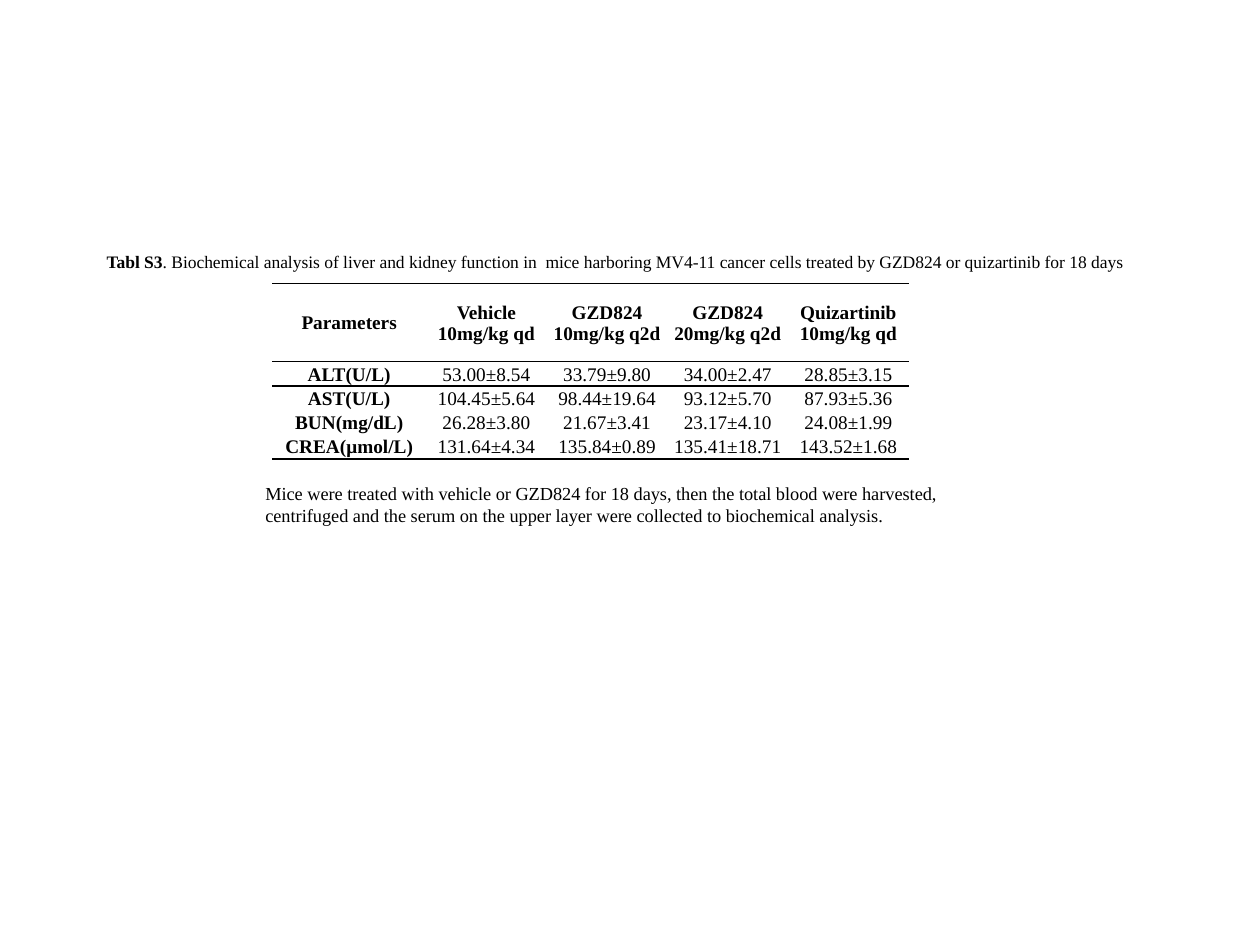
from dataclasses import dataclass

from lxml import etree
from pptx import Presentation
from pptx.dml.color import RGBColor
from pptx.enum import text
from pptx.oxml import ns
from pptx.util import Cm, Pt


@dataclass(frozen=True)
class Theme:
    font: str = "Times New Roman"
    ink: str = "000000"
    caption: float = 10
    table: float = 11
    note: float = 10.5
    rule: float = 1
    plain_table: str = "{2D5ABB26-0587-4C30-8999-92F81FD0307C}"


THEME = Theme()

CAPTION = [
    ("Tabl S3", True),
    (". Biochemical analysis of liver and kidney function in  mice harboring MV4-11 "
     "cancer cells treated by GZD824 or quizartinib for 18 days", False),
]
ROWS = [
    ["Parameters", "Vehicle 10mg/kg qd", "GZD824 10mg/kg q2d",
     "GZD824 20mg/kg q2d", "Quizartinib 10mg/kg qd"],
    ["ALT(U/L)", "53.00±8.54", "33.79±9.80", "34.00±2.47", "28.85±3.15"],
    ["AST(U/L)", "104.45±5.64", "98.44±19.64", "93.12±5.70", "87.93±5.36"],
    ["BUN(mg/dL)", "26.28±3.80", "21.67±3.41", "23.17±4.10", "24.08±1.99"],
    ["CREA(μmol/L)", "131.64±4.34", "135.84±0.89", "135.41±18.71", "143.52±1.68"],
]
NOTE = [
    ("Mice were treated with vehicle or GZD824 for 18 days, then the total blood were "
     "harvested, centrifuged and the serum on the upper layer were collected to "
     "biochemical analysis.", False),
]


def add_span(para, words, size, bold=False):
    span = para.add_run()
    span.text = words
    span.font.name = THEME.font
    span.font.size = Pt(size)
    span.font.bold = bold
    span.font.color.rgb = RGBColor.from_string(THEME.ink)


def add_text(page, left, top, width, height, spans, size, wrap=True):
    box = page.shapes.add_textbox(left, top, width, height)
    frame = box.text_frame
    frame.word_wrap = wrap
    frame.auto_size = text.MSO_AUTO_SIZE.SHAPE_TO_FIT_TEXT
    for words, bold in spans:
        add_span(frame.paragraphs[0], words, size, bold)


def add_rule(cell, side):
    """Draw one cell border; side is lnT or lnB, added in that order."""
    line = etree.SubElement(cell._tc.get_or_add_tcPr(), ns.qn(f"a:{side}"),
                            w=str(Pt(THEME.rule)))
    fill = etree.SubElement(line, ns.qn("a:solidFill"))
    etree.SubElement(fill, ns.qn("a:srgbClr"), val=THEME.ink)


def fill_cell(cell, words, bold):
    cell.fill.background()
    cell.margin_left = cell.margin_right = cell.margin_top = Cm(0.03)
    cell.margin_bottom = 0
    cell.vertical_anchor = text.MSO_ANCHOR.MIDDLE
    para = cell.text_frame.paragraphs[0]
    para.alignment = text.PP_ALIGN.CENTER
    add_span(para, words, THEME.table, bold)


def add_results(page, left, top, width, height):
    """Table with a rule above and below the header and one at the foot."""
    last = len(ROWS) - 1
    table = page.shapes.add_table(len(ROWS), len(ROWS[0]), left, top, width, height).table
    table.first_row = table.horz_banding = False
    table._tbl.tblPr.find(ns.qn("a:tableStyleId")).text = THEME.plain_table

    label_width, header_height = Cm(3.1), Cm(1.57)
    for index, column in enumerate(table.columns):
        column.width = label_width if index == 0 else (width - label_width) // 4
    for index, row in enumerate(table.rows):
        row.height = header_height if index == 0 else (height - header_height) // last

    for r, values in enumerate(ROWS):
        for c, words in enumerate(values):
            cell = table.cell(r, c)
            if r in (0, 1):
                add_rule(cell, "lnT")
            if r in (0, last):
                add_rule(cell, "lnB")
            fill_cell(cell, words, bold=r == 0 or c == 0)
    table.cell(last, 0).vertical_anchor = text.MSO_ANCHOR.TOP


def main():
    deck = Presentation()
    deck.slide_width, deck.slide_height = Cm(25.4), Cm(19.05)
    page = deck.slides.add_slide(deck.slide_layouts[6])
    add_results(page, Cm(5.49), Cm(5.72), Cm(12.83), Cm(3.53))
    add_text(page, Cm(1.9), Cm(4.93), Cm(21.31), Cm(0.69), CAPTION, THEME.caption, wrap=False)
    add_text(page, Cm(5.1), Cm(9.6), Cm(15.19), Cm(1.14), NOTE, THEME.note)
    deck.save("out.pptx")


if __name__ == "__main__":
    main()
